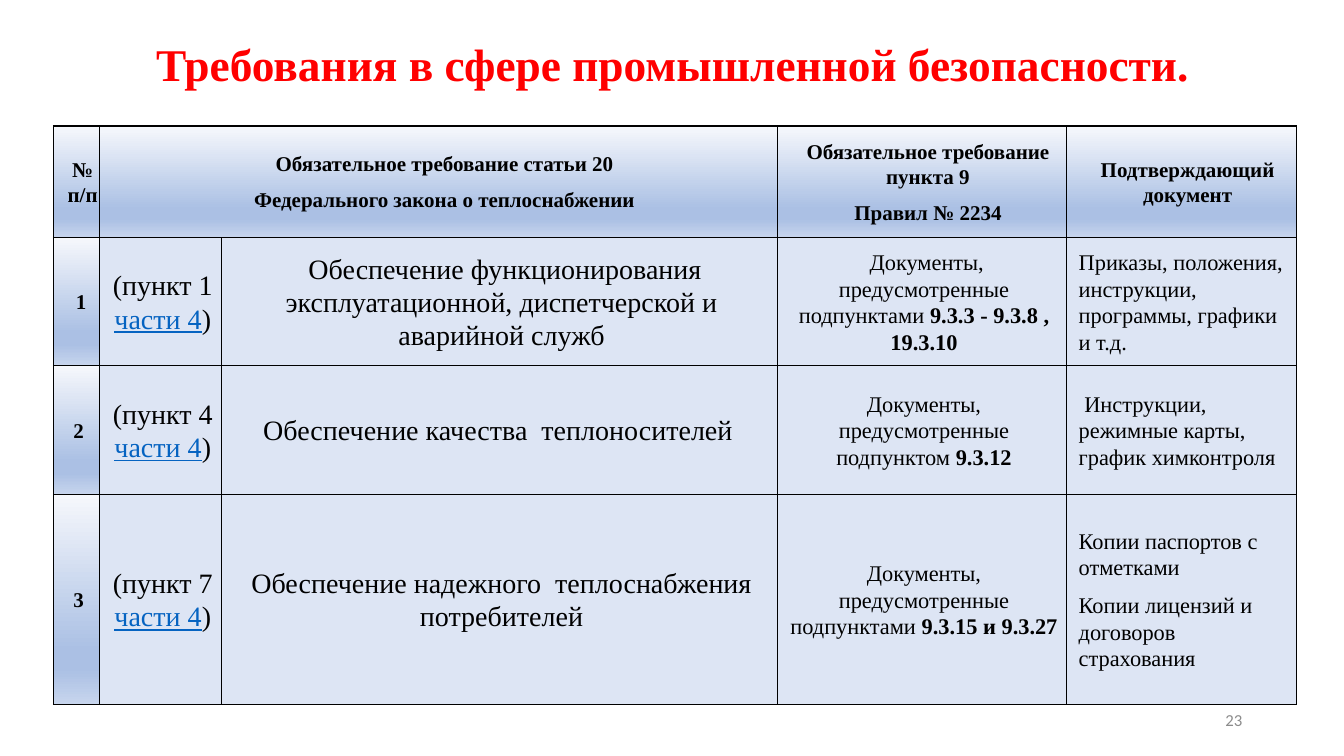
import pptx
import pptx.dml.color
import pptx.enum.text
import pptx.oxml
import pptx.oxml.ns
import pptx.util
from pptx.util import Inches

RED = pptx.dml.color.RGBColor(0xFF, 0, 0)
BLACK = pptx.dml.color.RGBColor(0, 0, 0)
GREY = pptx.dml.color.RGBColor(0x8C, 0x8C, 0x8C)
LINK_BLUE = pptx.dml.color.RGBColor(0x05, 0x63, 0xC1)
CELL_BLUE = pptx.dml.color.RGBColor(0x44, 0x72, 0xC4)
GRADIENT = [
    (0, pptx.dml.color.RGBColor(0xF6, 0xF8, 0xFC)),
    (74, pptx.dml.color.RGBColor(0xAB, 0xC0, 0xE4)),
    (83, pptx.dml.color.RGBColor(0xAB, 0xC0, 0xE4)),
    (100, pptx.dml.color.RGBColor(0xC7, 0xD5, 0xED)),
]
SERIF = "Times New Roman"
CENTER = pptx.enum.text.PP_ALIGN.CENTER
LEFT = pptx.enum.text.PP_ALIGN.LEFT
RIGHT = pptx.enum.text.PP_ALIGN.RIGHT
MIDDLE = pptx.enum.text.MSO_ANCHOR.MIDDLE

COLUMNS = [0.46, 1.21, 5.51, 2.87, 2.28]
ROWS = [1.11, 1.27, 1.28, 2.08]
HEADERS = {
    0: ["№ п/п"],
    1: ["Обязательное требование статьи 20", "Федерального закона о теплоснабжении"],
    3: ["Обязательное требование пункта 9", "Правил № 2234"],
    4: ["Подтверждающий документ"],
}
REQUIREMENTS = [
    (" 1", "1",
     " Обеспечение функционирования эксплуатационной, диспетчерской и аварийной служб",
     " Документы, предусмотренные подпунктами ", "9.3.3 - 9.3.8 , 19.3.10",
     ["Приказы, положения, инструкции, программы, графики и т.д."]),
    ("2", "4", "Обеспечение качества  теплоносителей ",
     "Документы, предусмотренные подпунктом ", "9.3.12",
     [" Инструкции, режимные карты, график химконтроля"]),
    ("3", "7", "Обеспечение надежного  теплоснабжения потребителей",
     "Документы, предусмотренные подпунктами ", "9.3.15 и 9.3.27 ",
     ["Копии паспортов с отметками", "Копии лицензий и договоров страхования"]),
]


def add_line(page, box, text, align, size, font, color, bold=False):
    """Place one line of text, vertically centred, in the given box."""
    frame = page.shapes.add_textbox(*map(Inches, box)).text_frame
    frame.word_wrap = True
    frame.vertical_anchor = MIDDLE
    para = frame.paragraphs[0]
    para.text = text
    para.alignment = align
    para.line_spacing = 0.9
    para.font.size = pptx.util.Pt(size)
    para.font.name = font
    para.font.bold = bold
    para.font.color.rgb = color


def decorate(cell, shaded):
    """Give a cell black borders and a gradient or a pale blue fill."""
    namespace = pptx.oxml.ns.nsdecls("a")
    properties = cell._tc.get_or_add_tcPr()
    for side in "LRTB":
        properties.append(pptx.oxml.parse_xml(
            f'<a:ln{side} {namespace} w="12700"><a:solidFill>'
            f'<a:srgbClr val="{BLACK}"/></a:solidFill></a:ln{side}>'))
    if shaded:
        stops = "".join(f'<a:gs pos="{position * 1000}"><a:srgbClr val="{color}"/></a:gs>'
                        for position, color in GRADIENT)
        fill = (f'<a:gradFill {namespace}><a:gsLst>{stops}</a:gsLst>'
                '<a:lin ang="5400000" scaled="0"/></a:gradFill>')
    else:
        fill = (f'<a:solidFill {namespace}><a:srgbClr val="{CELL_BLUE}">'
                '<a:alpha val="18000"/></a:srgbClr></a:solidFill>')
    properties.append(pptx.oxml.parse_xml(fill))


def write_cell(cell, paragraphs, size, bold=False, align=CENTER, right=0.08):
    """Write paragraphs, each a list of text pieces, and return the runs."""
    cell.vertical_anchor = MIDDLE
    cell.margin_left, cell.margin_right = Inches(0.12), Inches(right)
    cell.margin_top = cell.margin_bottom = 0
    runs = []
    for index, pieces in enumerate(paragraphs):
        frame = cell.text_frame
        para = frame.add_paragraph() if index else frame.paragraphs[0]
        para.alignment = align
        para.line_spacing = 1.07
        para.space_after = pptx.util.Pt(8)
        for piece in pieces:
            span = para.add_run()
            span.text = piece
            span.font.size = pptx.util.Pt(size)
            span.font.name = SERIF
            span.font.bold = bold
            span.font.color.rgb = BLACK
            runs.append(span)
    return runs


def add_requirements(page, box):
    """Place the table of requirements in the given box."""
    table = page.shapes.add_table(len(ROWS), len(COLUMNS), *map(Inches, box)).table
    for column, width in zip(table.columns, COLUMNS):
        column.width = Inches(width)
    for row, height in zip(table.rows, ROWS):
        row.height = Inches(height)
    for row in range(len(ROWS)):
        for column in range(len(COLUMNS)):
            decorate(table.cell(row, column), row == 0 or column == 0)
    table.cell(0, 1).merge(table.cell(0, 2))
    for column, lines in HEADERS.items():
        write_cell(table.cell(0, column), [[line] for line in lines], 15, True, right=0)
    for row, entry in enumerate(REQUIREMENTS, 1):
        number, point, duty, papers, clauses, proofs = entry
        cells = table.rows[row].cells
        write_cell(cells[0], [[number]], 15, True)
        link = write_cell(cells[1], [[f"(пункт {point} ", "части 4", ")"]], 20)[1]
        link.font.color.rgb = LINK_BLUE
        link.font.underline = True
        write_cell(cells[2], [[duty]], 20)
        write_cell(cells[3], [[papers, clauses]], 16)[1].font.bold = True
        write_cell(cells[4], [[proof] for proof in proofs], 16, align=LEFT)


def main():
    """Build the slide and save the deck."""
    deck = pptx.Presentation()
    deck.slide_width, deck.slide_height = Inches(13.33), Inches(7.5)
    page = deck.slides.add_slide(deck.slide_layouts[6])
    add_line(page, (0.92, 0.4, 11.5, 0.52), "Требования в сфере промышленной безопасности.",
             CENTER, 32.4, SERIF, RED, True)
    add_line(page, (9.42, 6.95, 3, 0.4), "23", RIGHT, 12, "Calibri", GREY)
    add_requirements(page, (0.53, 1.25, sum(COLUMNS), sum(ROWS)))
    deck.save("out.pptx")


if __name__ == "__main__":
    main()
